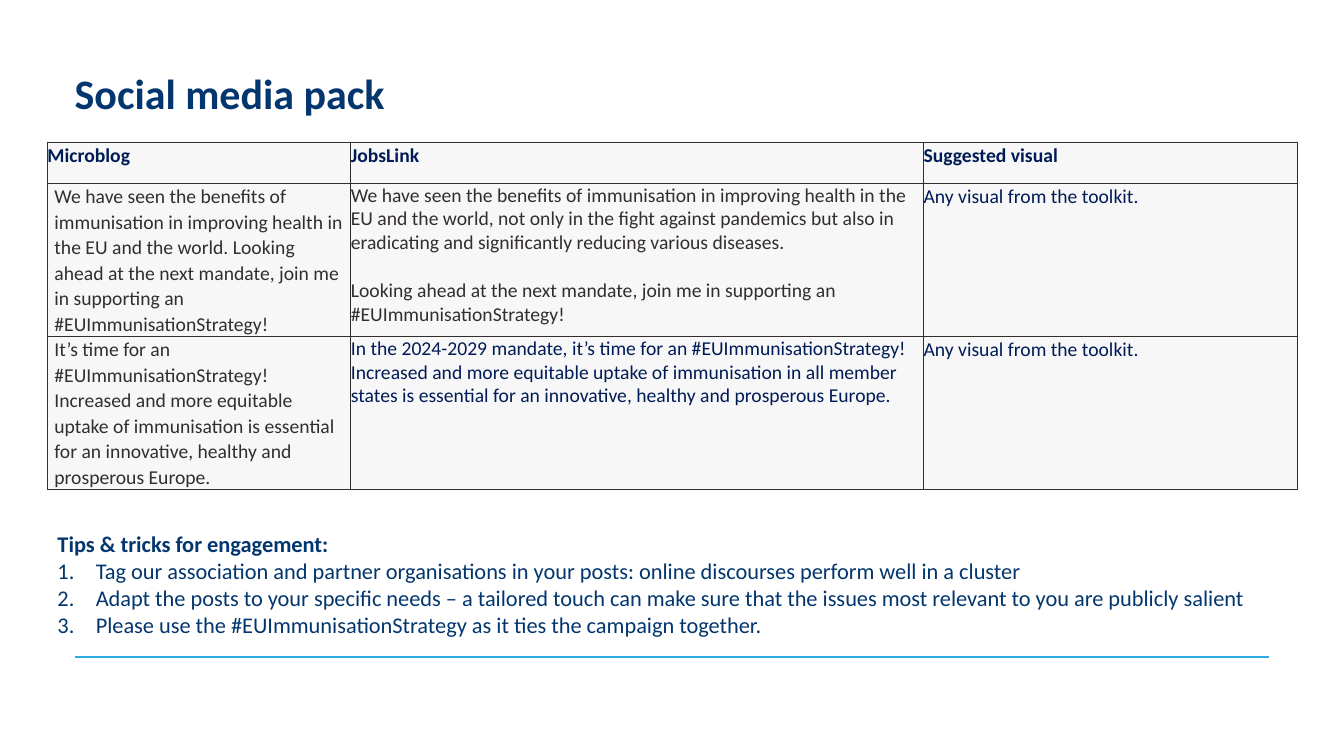
from pptx import Presentation
from pptx.dml.color import RGBColor
from pptx.enum.shapes import MSO_CONNECTOR
from pptx.enum.text import MSO_ANCHOR, MSO_AUTO_SIZE, PP_ALIGN
from pptx.oxml import parse_xml
from pptx.oxml.ns import nsdecls
from pptx.util import Inches, Pt
from lxml.etree import SubElement
from pptx.oxml.ns import qn

COLORS = {"heading": "03366E", "navy": "001B56", "dark": "332E2E",
          "cell": "F7F7F7", "rule": "30ABE3"}
COLUMN_WIDTHS = [3.01, 5.68, 3.71]
ROW_HEIGHTS = [0.41, 1.52, 1.52]
TABLE_LEFT, TABLE_TOP = 0.47, 1.41
MARGIN = 0.74

# Each cell: its paragraphs and text colour
ROWS = [
    [(["Microblog"], "navy"), (["JobsLink"], "navy"), (["Suggested visual"], "navy")],
    [(["We have seen the benefits of immunisation in improving health in the EU and "
       "the world. Looking ahead at the next mandate, join me in supporting an "
       "#EUImmunisationStrategy!"], "dark"),
     (["We have seen the benefits of immunisation in improving health in the EU and "
       "the world, not only in the fight against pandemics but also in eradicating "
       "and significantly reducing various diseases.",
       "Looking ahead at the next mandate, join me in supporting an "
       "#EUImmunisationStrategy!"], "dark"),
     (["Any visual from the toolkit."], "navy")],
    [(["It’s time for an #EUImmunisationStrategy! Increased and more equitable uptake "
       "of immunisation is essential for an innovative, healthy and prosperous "
       "Europe."], "dark"),
     (["In the 2024-2029 mandate, it’s time for an #EUImmunisationStrategy! Increased "
       "and more equitable uptake of immunisation in all member states is essential "
       "for an innovative, healthy and prosperous Europe."], "navy"),
     (["Any visual from the toolkit."], "navy")],
]
TIPS = [
    "Tips & tricks for engagement:",
    "Tag our association and partner organisations in your posts: online discourses "
    "perform well in a cluster",
    "Adapt the posts to your specific needs – a tailored touch can make sure that the "
    "issues most relevant to you are publicly salient",
    "Please use the #EUImmunisationStrategy as it ties the campaign together.",
]


def set_font(paragraph, size, color, bold):
    paragraph.font.name = "Calibri"
    paragraph.font.size = Pt(size)
    paragraph.font.bold = bold
    paragraph.font.color.rgb = RGBColor.from_string(COLORS[color])


def set_margins(target, side):
    target.margin_left = target.margin_right = Inches(side)
    target.margin_top = target.margin_bottom = 0


presentation = Presentation()
presentation.slide_width = Inches(13.33)
presentation.slide_height = Inches(7.5)
slide = presentation.slides.add_slide(presentation.slide_layouts[1])
title, tips = slide.placeholders

# Rule above the footer
rule = slide.shapes.add_connector(MSO_CONNECTOR.STRAIGHT, Inches(MARGIN), Inches(6.52),
                                  Inches(12.59), Inches(6.52))
rule.line.color.rgb = RGBColor.from_string(COLORS["rule"])
rule.line.width = Pt(1.5)
SubElement(rule._element.spPr, qn("a:effectLst"))

# Title
title.left, title.top = Inches(MARGIN), Inches(0.7)
title.width, title.height = Inches(11.84), Inches(0.5)
title.text_frame.text = "Social media pack"
title.text_frame.vertical_anchor = MSO_ANCHOR.MIDDLE
set_margins(title.text_frame, 0)
paragraph = title.text_frame.paragraphs[0]
paragraph.alignment = PP_ALIGN.LEFT
paragraph.line_spacing = 0.9
set_font(paragraph, 30, "heading", True)

# Table of posts
table = slide.shapes.add_table(len(ROWS), len(COLUMN_WIDTHS), Inches(TABLE_LEFT),
                               Inches(TABLE_TOP), Inches(sum(COLUMN_WIDTHS)),
                               Inches(sum(ROW_HEIGHTS))).table
table.first_row = table.horz_banding = False
for column, width in zip(table.columns, COLUMN_WIDTHS):
    column.width = Inches(width)
for row_index, (row, height) in enumerate(zip(ROWS, ROW_HEIGHTS)):
    table.rows[row_index].height = Inches(height)
    for column_index, (texts, color) in enumerate(row):
        cell = table.cell(row_index, column_index)
        is_header = row_index == 0
        set_margins(cell, 0.07 if column_index == 0 and not is_header else 0)
        is_long_post = column_index == 1 and not is_header
        cell.text_frame.text = "\n".join(texts)
        for paragraph in cell.text_frame.paragraphs:
            paragraph.line_spacing = 1.0 if is_long_post else 1.07
            set_font(paragraph, 14, color, is_header)
        for paragraph in cell.text_frame.paragraphs[1:]:
            paragraph.space_before = Pt(17)
        properties = cell._tc.get_or_add_tcPr()
        for side in ("lnL", "lnR", "lnT", "lnB"):
            properties.append(parse_xml(
                f'<a:{side} {nsdecls("a")} w="12700"><a:solidFill>'
                f'<a:srgbClr val="{COLORS["dark"]}"/></a:solidFill></a:{side}>'))
        cell.fill.solid()
        cell.fill.fore_color.rgb = RGBColor.from_string(COLORS["cell"])

# Numbered tips under a bold heading
tips.left, tips.top = Inches(TABLE_LEFT), Inches(5.21)
tips.width, tips.height = Inches(12.12), Inches(1.18)
tips.text_frame.text = "\n".join(TIPS)
tips.text_frame.auto_size = MSO_AUTO_SIZE.SHAPE_TO_FIT_TEXT
for index, paragraph in enumerate(tips.text_frame.paragraphs):
    is_heading = index == 0
    indent = 0 if is_heading else Inches(0.38)
    paragraph_properties = paragraph._p.get_or_add_pPr()
    paragraph_properties.set("marL", str(indent))
    paragraph_properties.set("indent", str(-indent))
    if is_heading:
        SubElement(paragraph_properties, qn("a:buNone"))
    else:
        SubElement(paragraph_properties, qn("a:buFont"), typeface="+mj-lt")
        SubElement(paragraph_properties, qn("a:buAutoNum"), type="arabicPeriod")
    paragraph.space_before = Pt(0)
    set_font(paragraph, 16, "heading", is_heading)

presentation.save("out.pptx")
